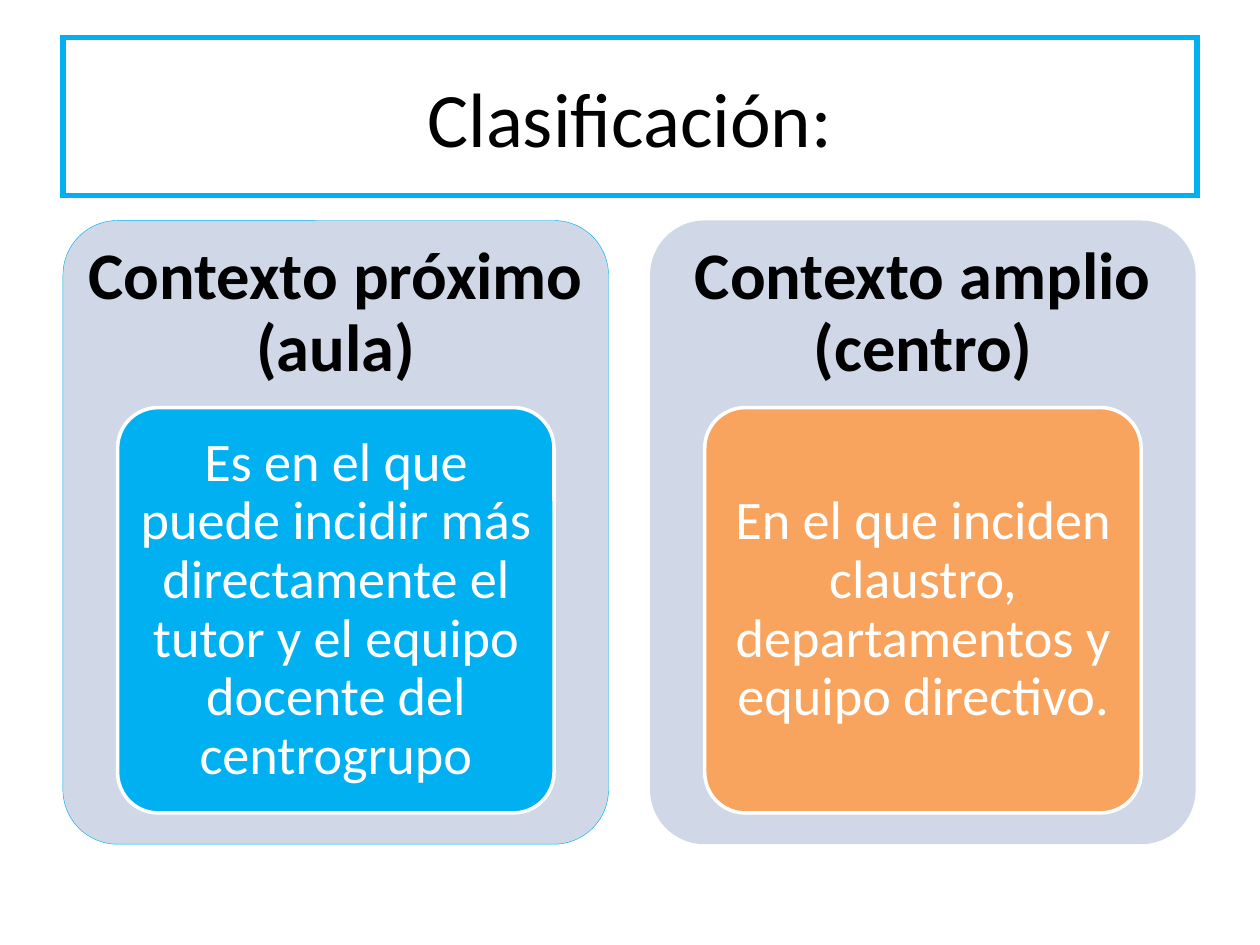
from lxml import etree
from pptx import Presentation
from pptx.dml.color import RGBColor
from pptx.enum.shapes import MSO_SHAPE
from pptx.enum.text import MSO_ANCHOR, PP_ALIGN
from pptx.oxml.ns import qn
from pptx.util import Inches, Pt

ROUNDED = MSO_SHAPE.ROUNDED_RECTANGLE
MIDDLE = MSO_ANCHOR.MIDDLE
CENTER = PP_ALIGN.CENTER
TITLE_ONLY = 5

COLORS = {
    "text": "000000",
    "white": "FFFFFF",
    "panel": "D0D8E8",
    "blue": "00B0F0",
    "orange": "F8A45E",
}
FONT = "Calibri"
WIDTH, HEIGHT = 10, 7.5
MARGIN = 0.5
PANEL_W, PANEL_H, PANEL_STEP = 4.33, 4.95, 4.66
PANEL_TOP = 1.75

PANELS = [
    ("Contexto próximo (aula)",
     "Es en el que puede incidir más directamente el tutor y el equipo "
     "docente del centrogrupo", "blue", "blue"),
    ("Contexto amplio (centro)",
     "En el que inciden claustro, departamentos y equipo directivo.",
     "orange", None),
]


def rgb(name):
    """Return the named palette colour."""
    return RGBColor.from_string(COLORS[name])


def set_line(sp, color, width):
    """Outline a shape, or remove its outline when no colour is given."""
    if color is None:
        sp.line.fill.background()
        return
    sp.line.color.rgb = rgb(color)
    sp.line.width = Pt(width)


def write(sp, text, size, color="text", bold=False, spacing=None, insets=None):
    """Put one centred, formatted paragraph into a shape."""
    tf = sp.text_frame
    tf.word_wrap = True
    tf.vertical_anchor = MIDDLE
    if insets:
        tf.margin_left = tf.margin_right = Inches(insets[0])
        tf.margin_top = tf.margin_bottom = Inches(insets[1])
    p = tf.paragraphs[0]
    p.alignment = CENTER
    if spacing:
        p.line_spacing = spacing
    r = p.add_run()
    r.text = text
    r.font.name = FONT
    r.font.size = Pt(size)
    r.font.bold = bold
    r.font.color.rgb = rgb(color)


def add_rounded(s, box, fill, line, width):
    """Add a flat rounded rectangle in the given box."""
    sp = s.shapes.add_shape(ROUNDED, *map(Inches, box))
    sp.adjustments[0] = 0.1
    sp.shadow.inherit = False
    sp.fill.solid()
    sp.fill.fore_color.rgb = rgb(fill)
    set_line(sp, line, width)
    return sp


def add_title(s, box, text):
    """Place the square-cornered framed title in the given box."""
    sp = s.shapes.title
    sp.left, sp.top, sp.width, sp.height = map(Inches, box)
    set_line(sp, "blue", 3)
    ln = sp.element.spPr.find(qn("a:ln"))
    etree.SubElement(ln, qn("a:miter"), lim="800000")
    write(sp, text, 44)


def add_panel(s, box, heading, body, fill, line):
    """Place a panel with a heading and an inner card in the given box."""
    x, y, w, h = box
    add_rounded(s, box, "panel", line, 0.25)
    head = s.shapes.add_textbox(*map(Inches, (x, y, w, 0.3 * h)))
    write(head, heading, 38, bold=True, spacing=0.9, insets=(0.16, 0.16))
    card_box = (x + 0.1 * w, y + 0.3 * h, 0.8 * w, 0.65 * h)
    card = add_rounded(s, card_box, fill, "white", 2)
    write(card, body, 31, "white", spacing=0.9, insets=(0.07, 0.06))


def main():
    """Build and save the slide."""
    prs = Presentation()
    prs.slide_width, prs.slide_height = Inches(WIDTH), Inches(HEIGHT)
    s = prs.slides.add_slide(prs.slide_layouts[TITLE_ONLY])
    add_title(s, (MARGIN, 0.3, WIDTH - 2 * MARGIN, 1.25), "Clasificación:")
    for i, panel in enumerate(PANELS):
        box = (MARGIN + i * PANEL_STEP, PANEL_TOP, PANEL_W, PANEL_H)
        add_panel(s, box, *panel)
    prs.save("out.pptx")


if __name__ == "__main__":
    main()
